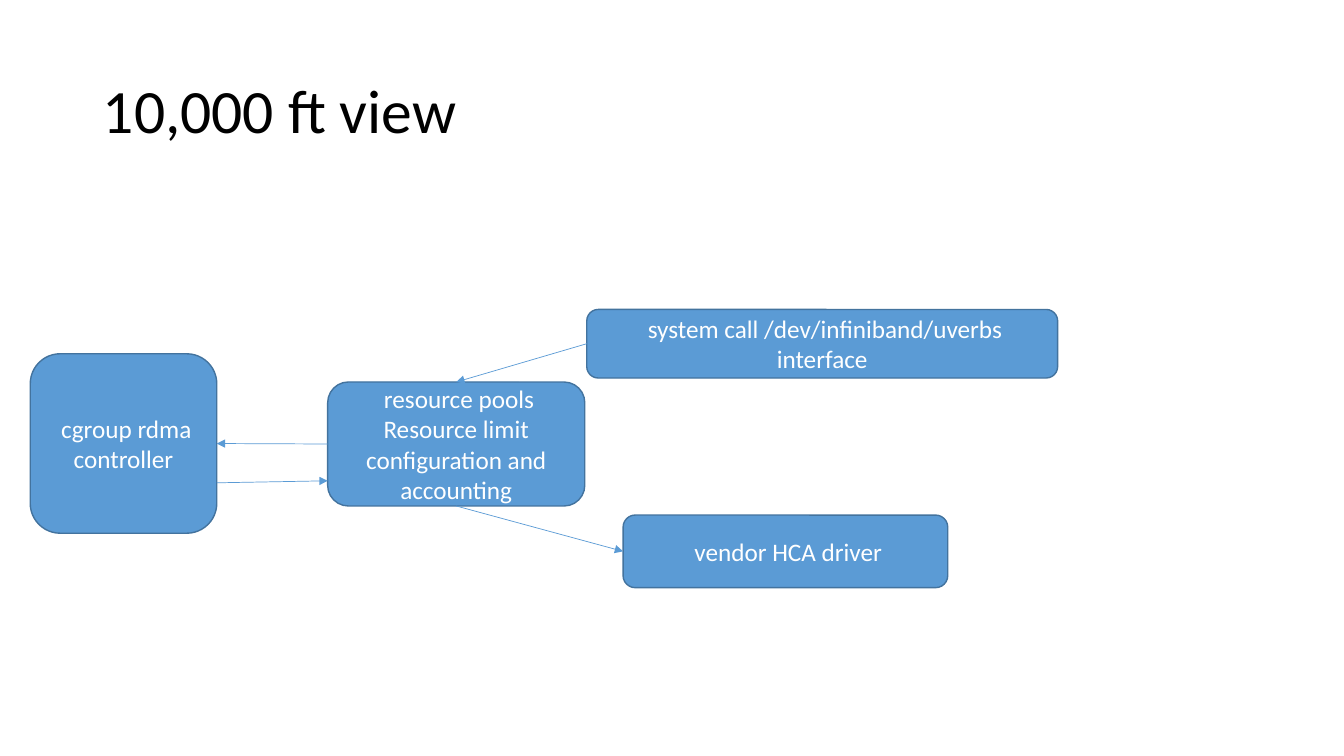
"""Build the overview slide of the cgroup rdma controller."""
from pptx import Presentation
from pptx import util as u
from pptx.dml.color import RGBColor
from pptx.enum import shapes, text
from pptx.oxml.ns import qn
from lxml import etree

TOP, LEFT, BOTTOM, RIGHT = range(4)
BLUE, EDGE, WHITE, BLACK = "5B9BD5", "43739E", "FFFFFF", "000000"


def paint(color_format, color):
    """Apply a hex colour to a fill, line fill or font colour."""
    color_format.rgb = RGBColor.from_string(color)


def add_span(para, words, size, color):
    """Add one formatted run to a paragraph."""
    span = para.add_run()
    span.text = words
    span.font.name = "Calibri"
    span.font.size = u.Pt(size)
    paint(span.font.color, color)


def set_title(page, words):
    """Place and format the slide title."""
    title = page.shapes.title
    title.left, title.top = u.Inches(0.92), u.Inches(0.4)
    title.width, title.height = u.Inches(11.5), u.Inches(1.45)
    title.text_frame.vertical_anchor = text.MSO_ANCHOR.MIDDLE
    para = title.text_frame.paragraphs[0]
    para.alignment = text.PP_ALIGN.LEFT
    para.line_spacing = 0.9
    add_span(para, words, 44, BLACK)


def add_box(page, left, top, width, height, *lines):
    """Add a rounded box with one centred paragraph per line."""
    box = page.shapes.add_shape(
        shapes.MSO_SHAPE.ROUNDED_RECTANGLE,
        *(u.Inches(n) for n in (left, top, width, height)))
    box.shadow.inherit = False
    box.fill.solid()
    paint(box.fill.fore_color, BLUE)
    paint(box.line.color, EDGE)
    box.line.width = u.Pt(1)
    frame = box.text_frame
    frame.word_wrap = True
    frame.vertical_anchor = text.MSO_ANCHOR.MIDDLE
    for number, words in enumerate(lines):
        para = frame.add_paragraph() if number else frame.paragraphs[0]
        para.alignment = text.PP_ALIGN.CENTER
        add_span(para, words, 18, WHITE)
    return box


def add_arrow(page, start=(0, 0), end=(0, 0)):
    """Add a thin arrow between two points in inches."""
    arrow = page.shapes.add_connector(
        shapes.MSO_CONNECTOR.STRAIGHT, *(u.Inches(n) for n in (*start, *end)))
    paint(arrow.line.color, BLUE)
    arrow.line.width = u.Pt(0.5)
    etree.SubElement(arrow.line._get_or_add_ln(), qn("a:tailEnd"), type="triangle")
    etree.SubElement(arrow._element.spPr, qn("a:effectLst"))
    return arrow


def join(page, source, source_side, target, target_side):
    """Connect the side middles of two boxes with an arrow."""
    arrow = add_arrow(page)
    arrow.begin_connect(source, source_side)
    arrow.end_connect(target, target_side)


def main():
    """Create the deck and save it."""
    deck = Presentation()
    deck.slide_width, deck.slide_height = u.Inches(13.33), u.Inches(7.5)
    page = deck.slides.add_slide(deck.slide_layouts[5])
    set_title(page, "10,000 ft view")

    controller = add_box(page, 0.3, 3.51, 1.85, 1.78, " cgroup rdma controller")
    pools = add_box(page, 3.25, 3.79, 2.55, 1.23, " resource pools",
                    "Resource limit configuration and accounting")
    system_call = add_box(page, 5.82, 3.07, 4.67, 0.68,
                          " system call /dev/infiniband/uverbs interface")
    driver = add_box(page, 6.18, 5.11, 3.22, 0.72, " vendor HCA driver")

    join(page, system_call, LEFT, pools, TOP)
    join(page, pools, BOTTOM, driver, LEFT)
    join(page, pools, LEFT, controller, RIGHT)
    add_arrow(page, (2.15, 4.79), (3.25, 4.77))
    deck.save("out.pptx")


if __name__ == "__main__":
    main()
